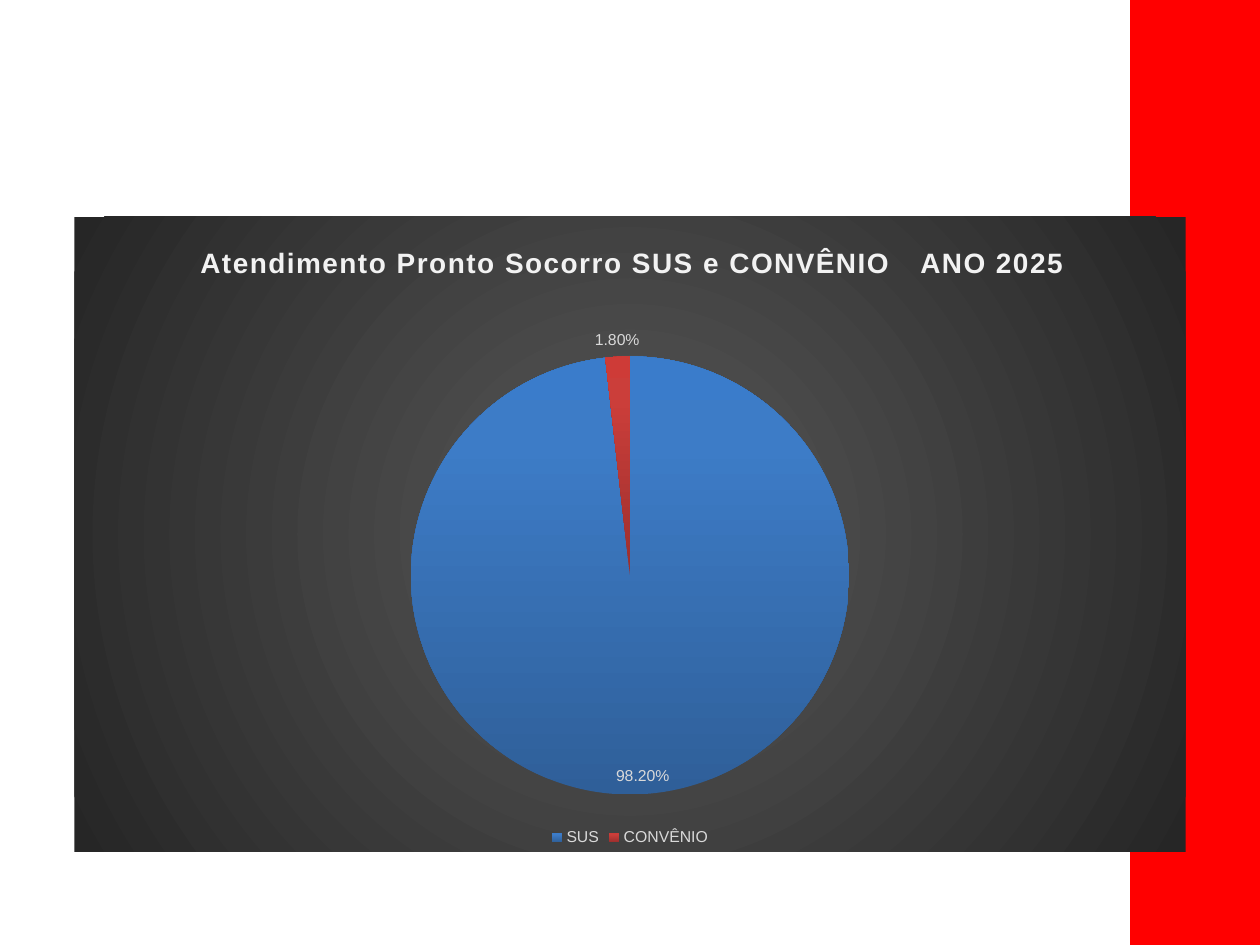
from lxml import etree
from pptx import Presentation
from pptx.chart.data import CategoryChartData
from pptx.dml.color import RGBColor
from pptx.enum.chart import XL_CHART_TYPE, XL_LABEL_POSITION, XL_LEGEND_POSITION
from pptx.enum.shapes import MSO_SHAPE
from pptx.oxml.ns import qn
from pptx.util import Inches, Pt

RECTANGLE = MSO_SHAPE.RECTANGLE
PIE = XL_CHART_TYPE.PIE
BEST_FIT = XL_LABEL_POSITION.BEST_FIT
BOTTOM = XL_LEGEND_POSITION.BOTTOM

FONT = "Arial"
RED = RGBColor(0xFF, 0x00, 0x00)
BLACK = RGBColor(0x00, 0x00, 0x00)
TITLE_GRAY = RGBColor(0xF2, 0xF2, 0xF2)
LABEL_GRAY = RGBColor(0xD9, 0xD9, 0xD9)

# Gradient stops: (percent, colour)
PANEL_STOPS = [(0, RGBColor(0x59, 0x59, 0x59)), (100, RGBColor(0x26, 0x26, 0x26))]
SLICE_STOPS = [
    [(0, RGBColor(0x2F, 0x5F, 0x99)), (80, RGBColor(0x3D, 0x7C, 0xC7)),
     (100, RGBColor(0x3A, 0x7C, 0xCB))],
    [(0, RGBColor(0x9C, 0x2F, 0x2D)), (80, RGBColor(0xCB, 0x3E, 0x3A)),
     (100, RGBColor(0xCE, 0x3B, 0x37))],
]

SHARES = {"SUS": 0.982, "CONVÊNIO": 0.018}


def format_font(font, size, color, bold=False):
    font.name = FONT
    font.size = Pt(size)
    font.bold = bold
    font.color.rgb = color


def add_text(paragraph, text, size=16, color=TITLE_GRAY, bold=True, spacing=1):
    """Add a run; spacing is the letter spacing in points."""
    run = paragraph.add_run()
    run.text = text
    format_font(run.font, size, color, bold)
    run.font._element.set("spc", str(int(spacing * 100)))


def make_gradient(stops, angle=None):
    """Return a linear gradient, or a circular one when no angle is given."""
    gradient = etree.Element(qn("a:gradFill"), rotWithShape="1")
    stop_list = etree.SubElement(gradient, qn("a:gsLst"))
    for percent, color in stops:
        stop = etree.SubElement(stop_list, qn("a:gs"), pos=str(percent * 1000))
        etree.SubElement(stop, qn("a:srgbClr"), val=str(color))
    if angle is None:
        circle = etree.SubElement(gradient, qn("a:path"), path="circle")
        center = dict.fromkeys("ltrb", "50000")
        etree.SubElement(circle, qn("a:fillToRect"), center)
    else:
        etree.SubElement(gradient, qn("a:lin"), ang=str(angle * 60000), scaled="0")
    return gradient


def make_layout(inner=False, **fractions):
    """Return a manual chart layout from fractions of the chart size."""
    layout = etree.Element(qn("c:layout"))
    manual = etree.SubElement(layout, qn("c:manualLayout"))
    if inner:
        etree.SubElement(manual, qn("c:layoutTarget"), val="inner")
    for axis in "xy":
        etree.SubElement(manual, qn(f"c:{axis}Mode"), val="edge")
    for name, value in fractions.items():
        etree.SubElement(manual, qn(f"c:{name}"), val=str(value))
    return layout


def remove_layout(element):
    for layout in element.findall(qn("c:layout")):
        element.remove(layout)


def add_band(slide):
    band = slide.shapes.add_shape(
        RECTANGLE, Inches(8.98), 0, Inches(1.25), Inches(7.5))
    band.shadow.inherit = False
    band.fill.solid()
    band.fill.fore_color.rgb = RED
    band.line.color.rgb = RED
    band.line.width = Pt(2)


def add_chart_title(chart):
    chart.has_title = True
    title = chart.chart_title
    paragraph = title.text_frame.paragraphs[0]
    add_text(paragraph, "Atendimento Pronto Socorro SUS e CONVÊNIO")
    add_text(paragraph, " ", spacing=12)  # wide gap before the year
    add_text(paragraph, "ANO 2025")
    element = title._element
    remove_layout(element)
    element.find(qn("c:tx")).addnext(make_layout(x=0.11, y=0.04))


def style_slices(plot):
    plot.vary_by_categories = True
    for index, stops in enumerate(SLICE_STOPS):
        slice_format = plot.series[0].points[index].format
        slice_format.line.fill.background()
        fill = slice_format.fill
        fill.solid()
        properties = fill._xPr
        properties.replace(properties.find(qn("a:solidFill")),
                           make_gradient(stops, angle=270))


def add_data_labels(plot):
    plot.has_data_labels = True
    labels = plot.data_labels
    labels.show_value = True
    labels.show_percentage = False
    labels.number_format = "0.00%"
    labels.number_format_is_linked = False
    labels.position = BEST_FIT
    format_font(labels.font, 9, LABEL_GRAY)


def add_pie_chart(slide):
    data = CategoryChartData(number_format="0.00%")
    data.categories = list(SHARES)
    data.add_series("Series 1", list(SHARES.values()))
    chart = slide.shapes.add_chart(
        PIE, Inches(0.59), Inches(1.72), Inches(8.82), Inches(5.04), data).chart
    format_font(chart.font, 10, BLACK)

    # Dark panel behind the chart
    chart_element = chart._chartSpace.find(qn("c:chart"))
    panel = etree.Element(qn("c:spPr"))
    panel.append(make_gradient(PANEL_STOPS))
    outline = etree.SubElement(panel, qn("a:ln"))
    etree.SubElement(outline, qn("a:noFill"))
    chart_element.addnext(panel)

    # Title, slices and labels
    add_chart_title(chart)
    plot = chart.plots[0]
    style_slices(plot)
    add_data_labels(plot)

    # Place of the pie
    plot_area = chart_element.find(qn("c:plotArea"))
    remove_layout(plot_area)
    plot_area.insert(0, make_layout(inner=True, x=0.3, y=0.22, w=0.4, h=0.69))

    # Legend
    chart.has_legend = True
    chart.legend.position = BOTTOM
    chart.legend.include_in_layout = False
    format_font(chart.legend.font, 9, LABEL_GRAY)


def main():
    presentation = Presentation()
    presentation.slide_width = Inches(10)
    presentation.slide_height = Inches(7.5)
    slide = presentation.slides.add_slide(presentation.slide_layouts[6])
    add_band(slide)
    add_pie_chart(slide)
    presentation.save("out.pptx")


if __name__ == "__main__":
    main()
